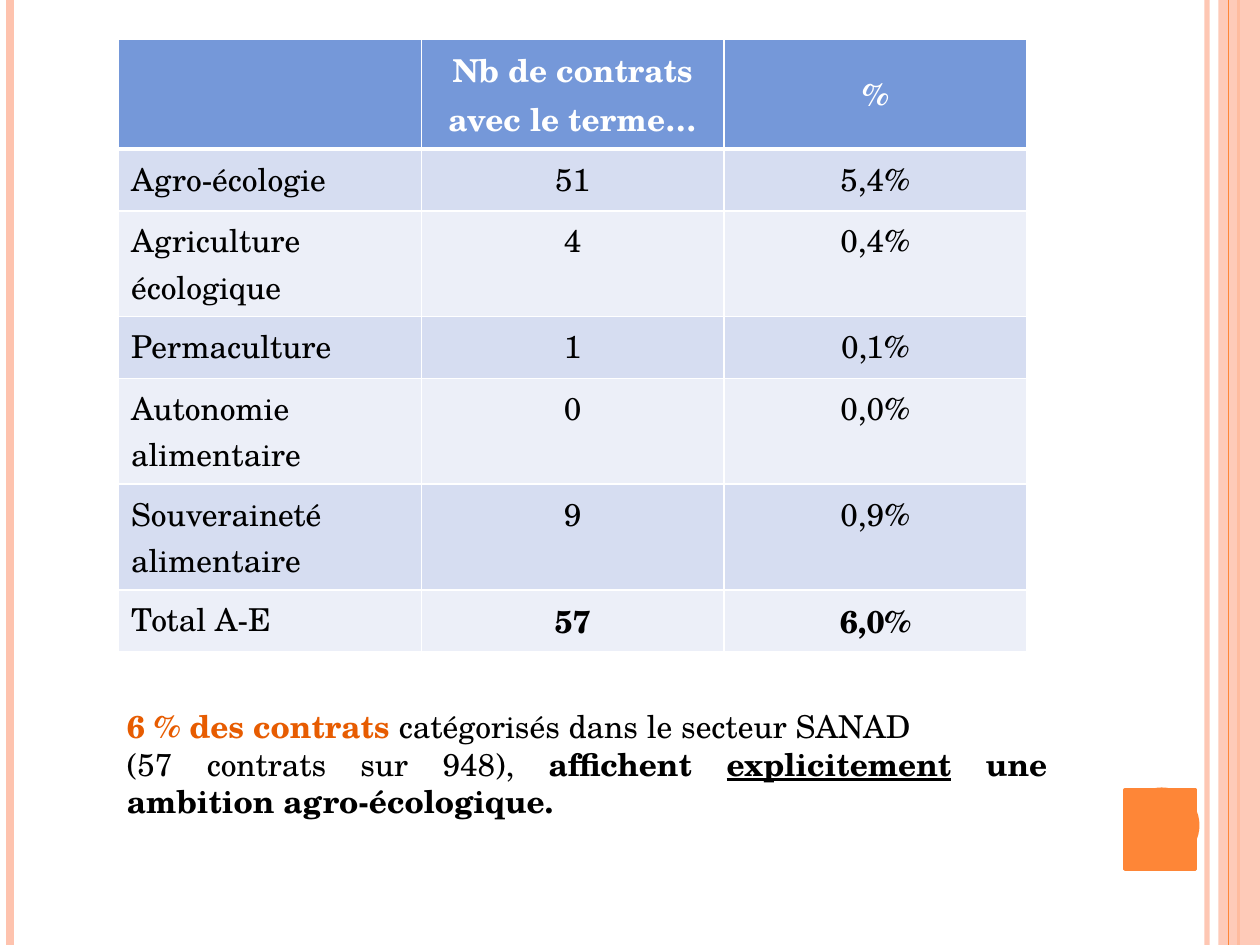
from lxml import etree
from pptx import Presentation
from pptx.dml.color import RGBColor
from pptx.enum.shapes import MSO_CONNECTOR, MSO_SHAPE
from pptx.enum.text import MSO_ANCHOR, PP_ALIGN
from pptx.oxml.ns import qn
from pptx.util import Inches, Pt

STRAIGHT = MSO_CONNECTOR.STRAIGHT
RECTANGLE, OVAL = MSO_SHAPE.RECTANGLE, MSO_SHAPE.OVAL
LEFT, CENTER, JUSTIFY = PP_ALIGN.LEFT, PP_ALIGN.CENTER, PP_ALIGN.JUSTIFY
TOP, MIDDLE = MSO_ANCHOR.TOP, MSO_ANCHOR.MIDDLE

FONT = "TeX Gyre Schola"
FONT_SIZE = 18
COLORS = {
    "white": "FFFFFF",
    "black": "000000",
    "peach": "FEC3AE",
    "orange": "FE8637",
    "accent": "E75C01",
    "header": "7598D9",
    "band_dark": "D6DDF1",
    "band_light": "ECEFF8",
}
SLIDE_WIDTH, SLIDE_HEIGHT = 10, 7.5

HEADINGS = ["", "Nb de contrats avec le terme…", "%"]
CONTRACTS = [
    ("Agro-écologie", "51", "5,4%"),
    ("Agriculture écologique", "4", "0,4%"),
    ("Permaculture", "1", "0,1%"),
    ("Autonomie alimentaire", "0", "0,0%"),
    ("Souveraineté alimentaire", "9", "0,9%"),
    ("Total A-E", "57", "6,0%"),
]
ROW_HEIGHTS = [0.84, 0.49, 0.84, 0.49, 0.84, 0.84, 0.49]
# Each run: text, colour, bold, underline
CONCLUSION = [
    [
        ("6 % des contrats ", "accent", True, False),
        ("catégorisés dans le secteur SANAD ", "black", False, False),
    ],
    [
        ("(57 contrats sur 948), ", "black", False, False),
        ("affichent ", "black", True, False),
        ("explicitement", "black", True, True),
        (" une ambition agro-écologique. ", "black", True, False),
    ],
]


def rgb(name):
    return RGBColor.from_string(COLORS[name])


def set_opacity(format_element, percent):
    color = next(format_element.iter(qn("a:srgbClr")))
    etree.SubElement(color, qn("a:alpha"), val=str(percent * 1000))


def add_run(paragraph, text, color, bold=False, underline=False):
    run = paragraph.add_run()
    run.text = text
    run.font.name = FONT
    run.font.size = Pt(FONT_SIZE)
    run.font.bold = bold
    run.font.underline = underline
    run.font.color.rgb = rgb(color)


def add_stripe(slide, x, color, width, opacity=100):
    """Draw a vertical line over the full height of the slide."""
    stripe = slide.shapes.add_connector(
        STRAIGHT, Inches(x), 0, Inches(x), Inches(SLIDE_HEIGHT))
    stripe.line.color.rgb = rgb(color)
    stripe.line.width = Pt(width)
    properties = stripe._element.spPr
    if opacity < 100:
        set_opacity(properties, opacity)
    etree.SubElement(properties, qn("a:effectLst"))


def add_filled_shape(slide, kind, box, color, line_width=0):
    shape = slide.shapes.add_shape(kind, *map(Inches, box))
    shape.shadow.inherit = False
    shape.fill.solid()
    shape.fill.fore_color.rgb = rgb(color)
    if line_width:
        shape.line.color.rgb = rgb(color)
        shape.line.width = Pt(line_width)
    else:
        shape.line.fill.background()
    return shape


def add_side_bands(slide):
    add_stripe(slide, 9.58, "peach", 3, opacity=93)
    add_stripe(slide, 0.08, "peach", 4.5)
    add_stripe(slide, 9.83, "orange", 1.5)
    band = add_filled_shape(
        slide, RECTANGLE, (9.67, 0, SLIDE_WIDTH - 9.67, SLIDE_HEIGHT), "peach")
    set_opacity(band._element.spPr, 87)
    add_stripe(slide, 9.75, "orange", 0.75)


def set_borders(cell, bottom_width):
    properties = cell._tc.get_or_add_tcPr()
    sides = [("L", 1), ("R", 1), ("T", 1), ("B", bottom_width)]
    for position, (side, width) in enumerate(sides):
        line = etree.Element(qn(f"a:ln{side}"), w=str(Pt(width)))
        fill = etree.SubElement(line, qn("a:solidFill"))
        etree.SubElement(fill, qn("a:srgbClr"), val=COLORS["white"])
        properties.insert(position, line)


def fill_cell(cell, text, fill, color, alignment, bold, is_header):
    cell.fill.solid()
    cell.fill.fore_color.rgb = rgb(fill)
    set_borders(cell, 3 if is_header else 1)
    cell.vertical_anchor = MIDDLE if text == "%" else TOP
    paragraph = cell.text_frame.paragraphs[0]
    paragraph.alignment = alignment
    if text:
        add_run(paragraph, text, color, bold)


def add_contract_table(slide, left, top, width):
    rows = [HEADINGS, *CONTRACTS]
    table = slide.shapes.add_table(
        len(rows), len(HEADINGS), Inches(left), Inches(top),
        Inches(width), Inches(sum(ROW_HEIGHTS))).table
    for row, height in zip(table.rows, ROW_HEIGHTS):
        row.height = Inches(height)
    last_row = len(rows) - 1
    for row_index, values in enumerate(rows):
        is_header = row_index == 0
        band = "band_dark" if row_index % 2 else "band_light"
        for column_index, text in enumerate(values):
            is_label = column_index == 0
            fill_cell(
                table.cell(row_index, column_index), text,
                fill="header" if is_header else band,
                color="white" if is_header else "black",
                alignment=LEFT if is_label else CENTER,
                bold=is_header or (row_index == last_row and not is_label),
                is_header=is_header)


def add_conclusion(slide, box):
    text_frame = slide.shapes.add_textbox(*map(Inches, box)).text_frame
    text_frame.word_wrap = True
    for index, runs in enumerate(CONCLUSION):
        paragraph = text_frame.add_paragraph() if index else text_frame.paragraphs[0]
        paragraph.alignment = JUSTIFY
        for run in runs:
            add_run(paragraph, *run)


def add_corner_marker(slide):
    add_filled_shape(slide, OVAL, (8.92, 6.25, 0.6, 0.6), "orange")
    add_filled_shape(slide, RECTANGLE, (8.93, 6.27, 0.56, 0.63), "orange", line_width=2)


def main():
    presentation = Presentation()
    presentation.slide_width = Inches(SLIDE_WIDTH)
    presentation.slide_height = Inches(SLIDE_HEIGHT)
    slide = presentation.slides.add_slide(presentation.slide_layouts[6])
    add_side_bands(slide)
    add_contract_table(slide, 0.94, 0.31, 7.21)
    add_conclusion(slide, (0.91, 5.56, 7.5, 1.01))
    add_corner_marker(slide)
    presentation.save("out.pptx")


if __name__ == "__main__":
    main()
